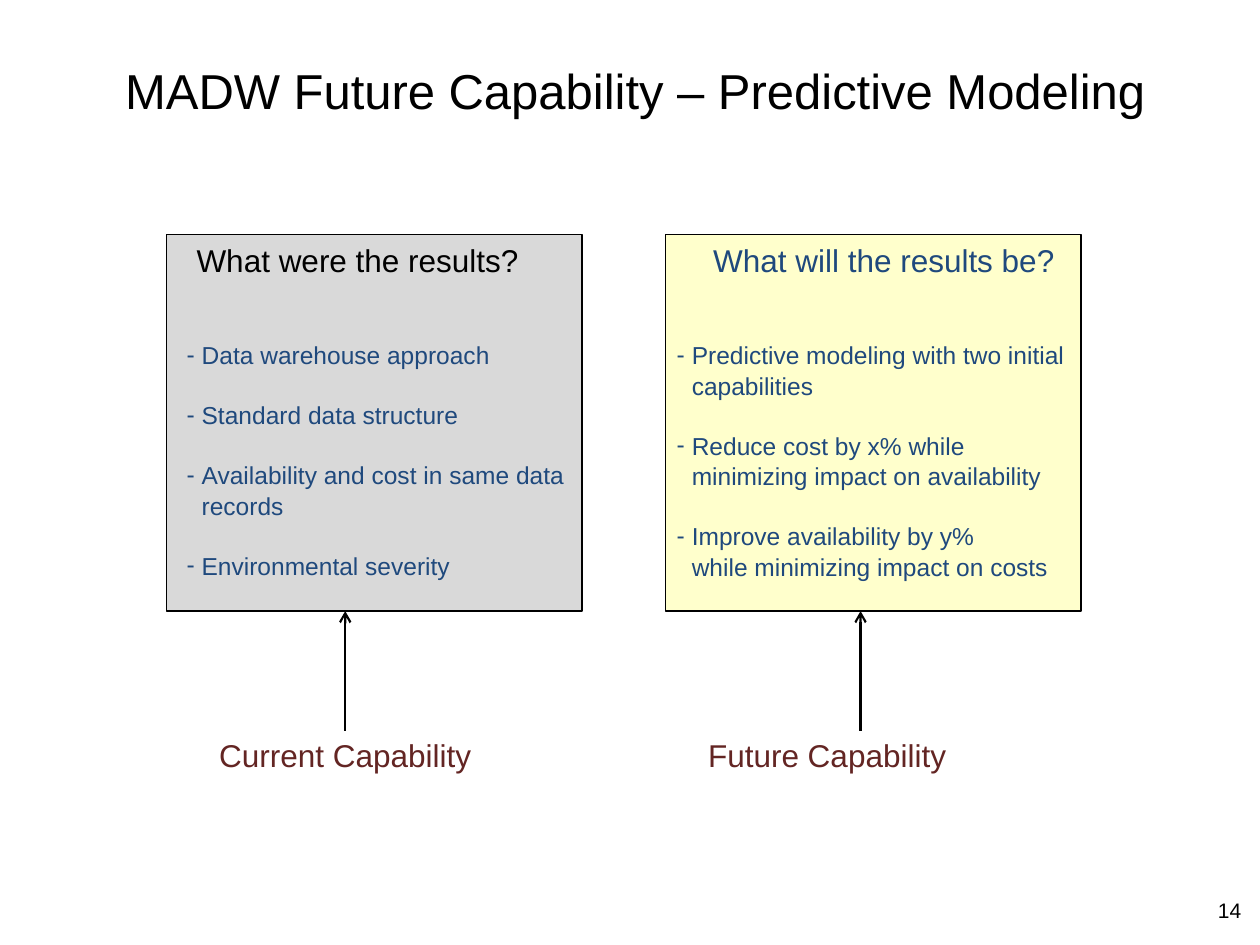
from lxml import etree
from pptx import Presentation
from pptx.dml.color import RGBColor
from pptx.enum import shapes, text
from pptx.oxml.ns import qn
from pptx.util import Inches, Pt

BLACK = RGBColor(0x00, 0x00, 0x00)
NAVY = RGBColor(0x1F, 0x49, 0x7D)
MAROON = RGBColor(0x63, 0x25, 0x23)
GREY = RGBColor(0xD9, 0xD9, 0xD9)
CREAM = RGBColor(0xFF, 0xFF, 0xCC)

PANEL_TOP, PANEL_WIDTH, PANEL_HEIGHT = 1.86, 3.3, 2.99
LABEL_TOP = 5.8
INSETS = (0.09, 0.04, 0.09, 0.04)


def write(shape, paragraphs, size, color, align=text.PP_ALIGN.LEFT,
          anchor=text.MSO_ANCHOR.TOP, insets=(0.1, 0.05, 0.1, 0.05),
          bullet=None, spacing=1.0, gap=0):
    """Fill a shape with paragraphs; insets run left, top, right, bottom."""
    frame = shape.text_frame
    frame.word_wrap = True
    frame.auto_size = text.MSO_AUTO_SIZE.NONE
    frame.vertical_anchor = anchor
    (frame.margin_left, frame.margin_top,
     frame.margin_right, frame.margin_bottom) = map(Inches, insets)
    frame.text = "\n".join(paragraphs)
    for number, paragraph in enumerate(frame.paragraphs):
        paragraph.alignment = align
        paragraph.line_spacing = spacing
        paragraph.space_before = Pt(gap if number else 0)
        if bullet:
            properties = paragraph._p.get_or_add_pPr()
            properties.set("marL", str(Inches(0.12)))
            properties.set("indent", str(-Inches(0.12)))
            etree.SubElement(properties, qn("a:buChar"), char=bullet)
        paragraph.font.name = "Arial"
        paragraph.font.size = Pt(size)
        paragraph.font.color.rgb = color


prs = Presentation()
prs.slide_width, prs.slide_height = Inches(10), Inches(7.5)
slide = prs.slides.add_slide(prs.slide_layouts[3])
title, current_list, future_list = slide.placeholders

title.left, title.top = Inches(0.54), Inches(0.23)
title.width, title.height = Inches(9), Inches(1.25)
write(title, ["MADW Future Capability – Predictive Modeling"], 28, BLACK,
      align=text.PP_ALIGN.CENTER, anchor=text.MSO_ANCHOR.MIDDLE,
      insets=(0.1, 0.05, 0.1, 0.34))

capabilities = [
    dict(left=1.32, fill=GREY, question="What were the results?",
         question_color=BLACK, question_inset=0.24,
         body=current_list, body_left=1.39,
         items=["Data warehouse approach", "Standard data structure",
                "Availability and cost in same data\vrecords",
                "Environmental severity"],
         label="Current Capability", label_left=1.65, arrow_x=2.74),
    dict(left=5.28, fill=CREAM, question="What will the results be?",
         question_color=NAVY, question_inset=0.38,
         body=future_list, body_left=5.28,
         items=["Predictive modeling with two initial\vcapabilities",
                "Reduce cost by x% while\vminimizing impact on availability",
                "Improve availability by y%\vwhile minimizing impact on costs"],
         label="Future Capability", label_left=5.53, arrow_x=6.83),
]

for capability in capabilities:
    panel = slide.shapes.add_shape(
        shapes.MSO_SHAPE.RECTANGLE, Inches(capability["left"]),
        Inches(PANEL_TOP), Inches(PANEL_WIDTH), Inches(PANEL_HEIGHT))
    panel.shadow.inherit = False
    panel.fill.solid()
    panel.fill.fore_color.rgb = capability["fill"]
    panel.line.color.rgb = BLACK
    panel.line.width = Pt(0.75)
    write(panel, [capability["question"]], 18, capability["question_color"],
          insets=(capability["question_inset"], 0.05, 0.1, 0.05))

    body = capability["body"]
    body.left, body.top = Inches(capability["body_left"]), Inches(2.65)
    body.width, body.height = Inches(3.3), Inches(2.1)
    write(body, capability["items"], 14, NAVY, insets=INSETS,
          bullet="-", spacing=1.04, gap=16.8)
    panel.element.addnext(body.element)  # the list lies on top of its panel

    label = slide.shapes.add_textbox(
        Inches(capability["label_left"]), Inches(LABEL_TOP),
        Inches(2.3), Inches(0.39))
    write(label, [capability["label"]], 18, MAROON, insets=INSETS)

    x = Inches(capability["arrow_x"])
    arrow = slide.shapes.add_connector(
        shapes.MSO_CONNECTOR.STRAIGHT, x, Inches(LABEL_TOP),
        x, Inches(PANEL_TOP + PANEL_HEIGHT))
    arrow.line.color.rgb = BLACK
    arrow.line.width = Pt(1.25)
    etree.SubElement(arrow.line._get_or_add_ln(), qn("a:tailEnd"), type="arrow")
    etree.SubElement(arrow.element.spPr, qn("a:effectLst"))

page_number = slide.shapes.add_textbox(
    Inches(9.42), Inches(7.02), Inches(0.53), Inches(0.4))
write(page_number, ["14"], 12, BLACK, align=text.PP_ALIGN.RIGHT,
      anchor=text.MSO_ANCHOR.MIDDLE)

prs.save("out.pptx")
